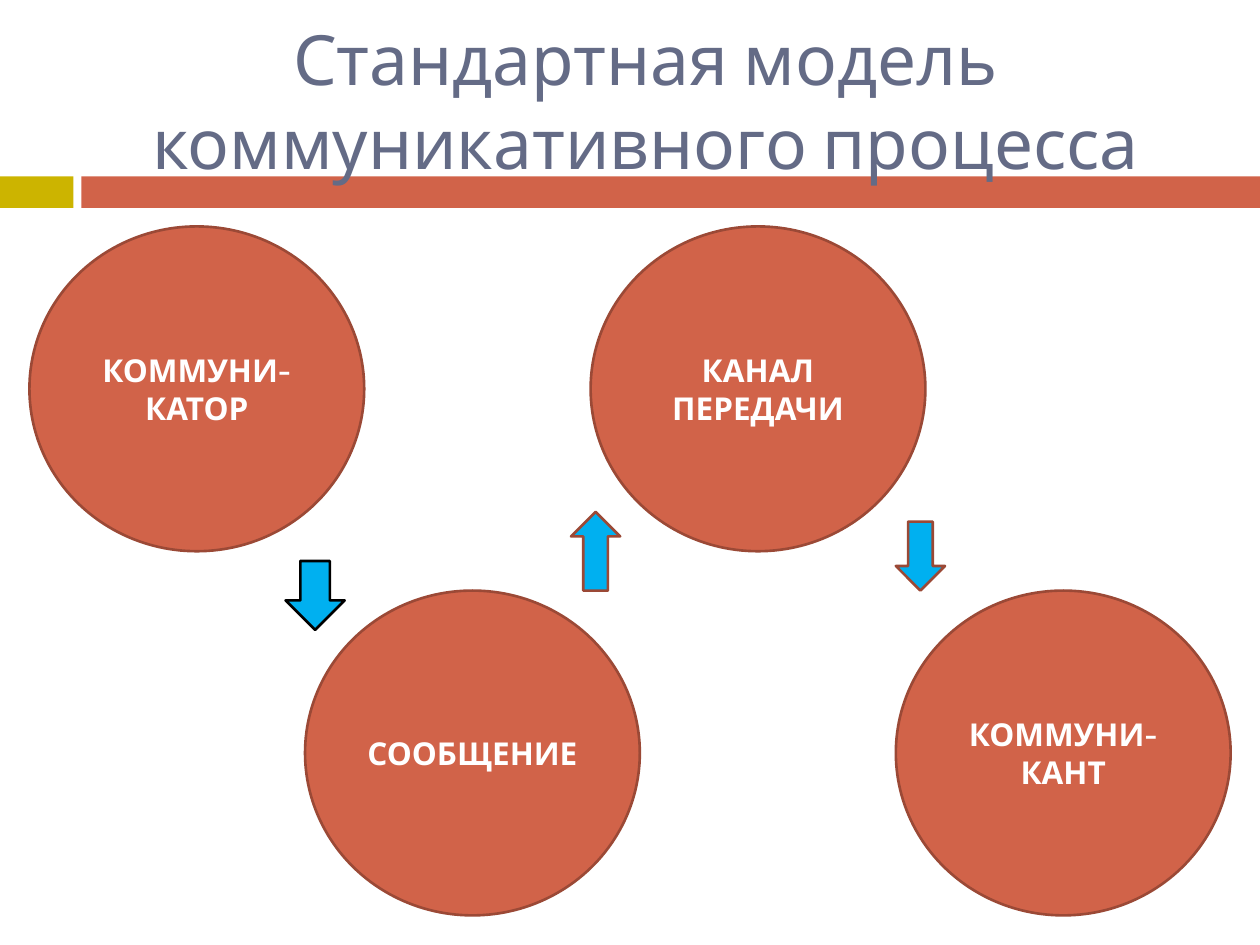
from dataclasses import dataclass

from pptx import Presentation
from pptx.dml.color import RGBColor
from pptx.enum.shapes import MSO_SHAPE
from pptx.enum.text import MSO_ANCHOR, PP_ALIGN
from pptx.util import Pt


@dataclass(frozen=True)
class Theme:
    font: str = "Cabin"
    title: str = "646B86"
    main: str = "D16349"
    edge: str = "9B4936"
    accent: str = "CCB400"
    arrow: str = "00B0F0"
    dark: str = "000000"
    light: str = "FFFFFF"
    title_size: float = 39.6
    label_size: float = 18
    stroke: float = 1.5


def write(frame, text, *, font, size, color, bold=False):
    """Fill a frame with centred text, one paragraph per line."""
    frame.word_wrap = True
    frame.vertical_anchor = MSO_ANCHOR.MIDDLE
    frame.text = text
    for para in frame.paragraphs:
        para.alignment = PP_ALIGN.CENTER
        for run in para.runs:
            run.font.name = font
            run.font.size = Pt(size)
            run.font.bold = bold
            run.font.color.rgb = RGBColor.from_string(color)


class Board:
    """Hold the theme and the slide being drawn; lengths are points."""

    def __init__(self, slide, theme):
        self.slide = slide
        self.theme = theme

    def shape(self, kind, box, fill, line=None):
        item = self.slide.shapes.add_shape(kind, *map(Pt, box))
        item.shadow.inherit = False
        item.fill.solid()
        item.fill.fore_color.rgb = RGBColor.from_string(fill)
        if line:
            item.line.color.rgb = RGBColor.from_string(line)
            item.line.width = Pt(self.theme.stroke)
        else:
            item.line.fill.background()
        return item

    def bar(self, box, fill):
        self.shape(MSO_SHAPE.RECTANGLE, box, fill)

    def title(self, text, box):
        item = self.slide.shapes.title
        item.left, item.top, item.width, item.height = map(Pt, box)
        write(item.text_frame, text, font=self.theme.font,
              size=self.theme.title_size, color=self.theme.title)
        # The title's descenders lie over the bars, so it goes to the front.
        item.element.getparent().append(item.element)

    def circle(self, text, box):
        item = self.shape(MSO_SHAPE.OVAL, box, self.theme.main, self.theme.edge)
        write(item.text_frame, text, font=self.theme.font,
              size=self.theme.label_size, color=self.theme.light, bold=True)

    def arrow(self, kind, box, line):
        self.shape(kind, box, self.theme.arrow, line)


def main():
    deck = Presentation()
    deck.slide_width, deck.slide_height = Pt(720), Pt(540)
    theme = Theme()
    board = Board(deck.slides.add_slide(deck.slide_layouts[5]), theme)

    board.bar((0, 100.8, 42, 18), theme.accent)
    board.bar((46.5, 100.8, 673.5, 18), theme.main)
    board.title("Стандартная модель коммуникативного процесса",
                (48, 18, 642, 78))

    upper, lower = 129.4, 337.5
    stages = [
        ("КОММУНИ-\nКАТОР", 16.8, upper),
        ("СООБЩЕНИЕ", 174.3, lower),
        ("КАНАЛ ПЕРЕДАЧИ", 337.5, upper),
        ("КОММУНИ-\nКАНТ", 511.9, lower),
    ]
    for text, left, top in stages:
        board.circle(text, (left, top, 191.3, 185.6))

    down, up = MSO_SHAPE.DOWN_ARROW, MSO_SHAPE.UP_ARROW
    board.arrow(down, (163.2, 320.6, 33.8, 39.4), theme.dark)
    board.arrow(up, (326.3, 292.5, 28.1, 45), theme.edge)
    board.arrow(down, (511.9, 298.1, 28.1, 39.4), theme.edge)

    deck.save("out.pptx")


if __name__ == "__main__":
    main()
